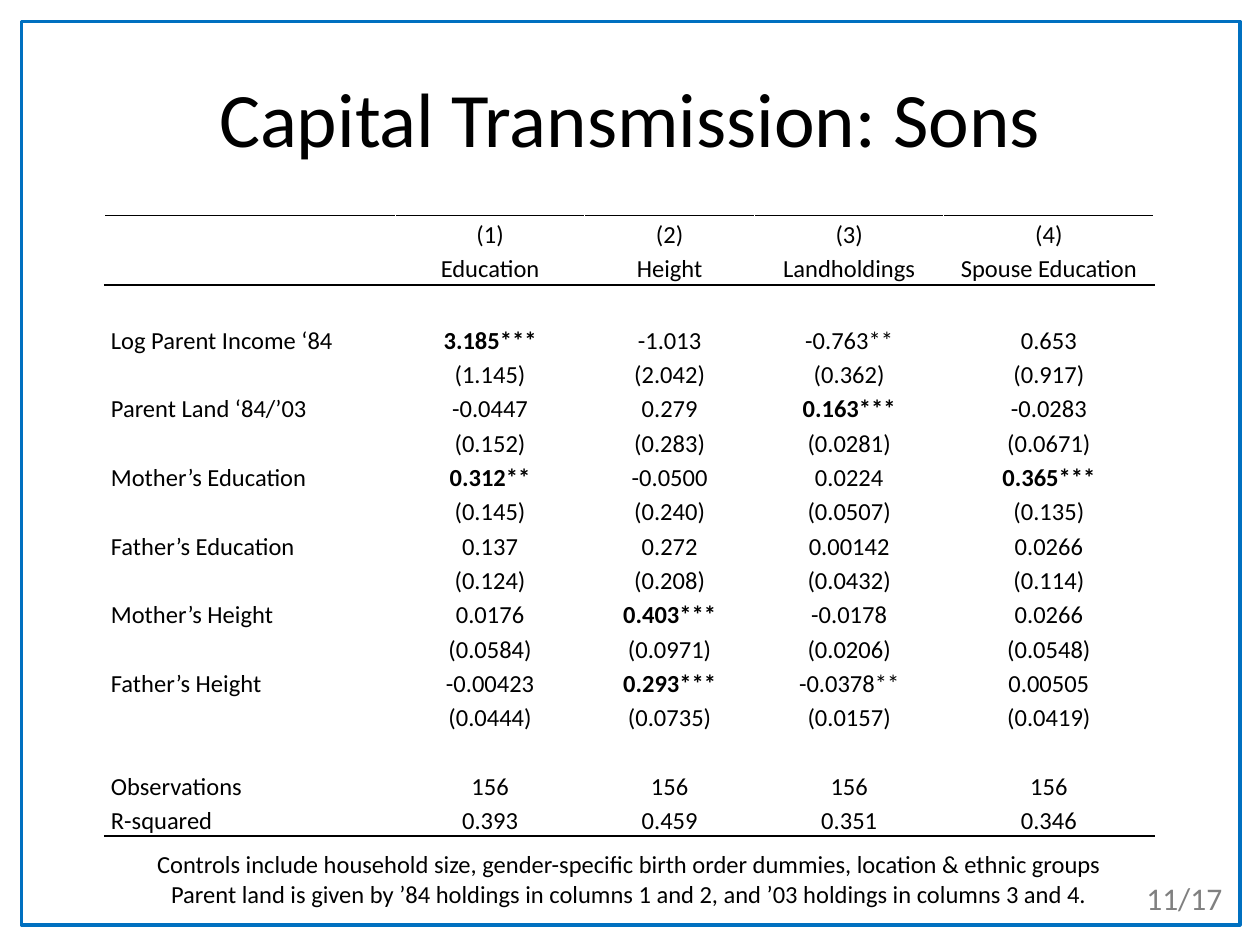
from lxml.etree import SubElement
from pptx import Presentation
from pptx.dml.color import RGBColor
from pptx.enum.shapes import MSO_SHAPE
from pptx.enum.text import MSO_ANCHOR, PP_ALIGN
from pptx.oxml.ns import qn
from pptx.util import Inches, Pt

COLORS = {"text": "000000", "frame": "0070C0", "page": "808080"}
FONT = "Calibri"
COLUMN_WIDTHS = [2.31, 1.5, 1.35, 1.5, 1.67]
ROW_HEIGHT = 0.27
TALL_ROWS = {1: 0.28, 2: 0.29}
RULES = {0: ["lnT"], 1: ["lnB"], 2: ["lnT"], 17: ["lnB"]}
BOLD_CELLS = {(3, 1), (5, 3), (7, 1), (7, 4), (11, 2), (13, 2)}
RESULTS = [
    ["", "(1)", "(2)", "(3)", "(4)"],
    ["", "Education", "Height", "Landholdings", "Spouse Education"],
    [""] * 5,
    ["Log Parent Income ‘84", "3.185***", "-1.013", "-0.763**", "0.653"],
    ["", "(1.145)", "(2.042)", "(0.362)", "(0.917)"],
    ["Parent Land ‘84/’03", "-0.0447", "0.279", "0.163***", "-0.0283"],
    ["", "(0.152)", "(0.283)", "(0.0281)", "(0.0671)"],
    ["Mother’s Education", "0.312**", "-0.0500", "0.0224", "0.365***"],
    ["", "(0.145)", "(0.240)", "(0.0507)", "(0.135)"],
    ["Father’s Education", "0.137", "0.272", "0.00142", "0.0266"],
    ["", "(0.124)", "(0.208)", "(0.0432)", "(0.114)"],
    ["Mother’s Height", "0.0176", "0.403***", "-0.0178", "0.0266"],
    ["", "(0.0584)", "(0.0971)", "(0.0206)", "(0.0548)"],
    ["Father’s Height", "-0.00423", "0.293***", "-0.0378**", "0.00505"],
    ["", "(0.0444)", "(0.0735)", "(0.0157)", "(0.0419)"],
    [""] * 5,
    ["Observations", "156", "156", "156", "156"],
    ["R-squared", "0.393", "0.459", "0.351", "0.346"],
]
NOTES = [
    "Controls include household size, gender-specific birth order dummies, location & ethnic groups",
    "Parent land is given by ’84 holdings in columns 1 and 2, and ’03 holdings in columns 3 and 4.",
]


def add_run(paragraph, text, size, color="text", bold=False):
    run = paragraph.add_run()
    run.text = text
    run.font.name = FONT
    run.font.size = Pt(size)
    run.font.bold = bold
    run.font.color.rgb = RGBColor.from_string(COLORS[color])


def add_rule(cell, side):
    """Draw a 1 pt line on one side (lnT or lnB) of a cell."""
    line = SubElement(cell._tc.get_or_add_tcPr(), qn(f"a:{side}"), w=str(Pt(1)))
    fill = SubElement(line, qn("a:solidFill"))
    SubElement(fill, qn("a:srgbClr"), val=COLORS["text"])


def fill_cell(cell, text, row, column):
    cell.margin_left = cell.margin_right = Inches(0.05)
    cell.margin_top = cell.margin_bottom = 0
    for side in RULES.get(row, []):
        add_rule(cell, side)
    cell.fill.background()
    paragraph = cell.text_frame.paragraphs[0]
    paragraph.line_spacing = 1.15
    paragraph.alignment = PP_ALIGN.CENTER if column else PP_ALIGN.LEFT
    if text:
        add_run(paragraph, text, 14, bold=(row, column) in BOLD_CELLS)
    else:
        # Keeps an empty cell from growing to the default text size
        SubElement(paragraph._p, qn("a:endParaRPr"), sz="1400")


def add_results_table(slide):
    heights = [TALL_ROWS.get(row, ROW_HEIGHT) for row in range(len(RESULTS))]
    table = slide.shapes.add_table(
        len(RESULTS), len(COLUMN_WIDTHS), Inches(0.83), Inches(1.71),
        Inches(sum(COLUMN_WIDTHS)), Inches(sum(heights))).table
    table.first_row = table.horz_banding = False
    for column, width in zip(table.columns, COLUMN_WIDTHS):
        column.width = Inches(width)
    for row, height in zip(table.rows, heights):
        row.height = Inches(height)
    for row, values in enumerate(RESULTS):
        for column, text in enumerate(values):
            fill_cell(table.cell(row, column), text, row, column)


def add_frame(slide):
    frame = slide.shapes.add_shape(
        MSO_SHAPE.RECTANGLE, Inches(0.17), Inches(0.17), Inches(9.67), Inches(7.17))
    frame.shadow.inherit = False
    frame.fill.background()
    frame.line.color.rgb = RGBColor.from_string(COLORS["frame"])
    frame.line.width = Pt(2)


def set_title(slide, text):
    title = slide.shapes.title
    title.left, title.top = Inches(0.5), Inches(0.3)
    title.width, title.height = Inches(9), Inches(1.25)
    title.text_frame.vertical_anchor = MSO_ANCHOR.MIDDLE
    paragraph = title.text_frame.paragraphs[0]
    paragraph.alignment = PP_ALIGN.CENTER
    add_run(paragraph, text, 44)


def add_text(slide, box, lines, size, color="text", alignment=PP_ALIGN.LEFT):
    frame = slide.shapes.add_textbox(*map(Inches, box)).text_frame
    frame.word_wrap = True
    for index, line in enumerate(lines):
        paragraph = frame.add_paragraph() if index else frame.paragraphs[0]
        paragraph.alignment = alignment
        add_run(paragraph, line, size, color)


def main():
    presentation = Presentation()
    presentation.slide_width, presentation.slide_height = Inches(10), Inches(7.5)
    slide = presentation.slides.add_slide(presentation.slide_layouts[5])
    set_title(slide, "Capital Transmission: Sons")
    add_results_table(slide)
    add_frame(slide)
    add_text(slide, (0.83, 6.69, 8.33, 0.81), NOTES, 14, alignment=PP_ALIGN.CENTER)
    add_text(slide, (9, 6.93, 0.83, 0.4), ["11/17"], 18, "page")
    presentation.save("out.pptx")


if __name__ == "__main__":
    main()
